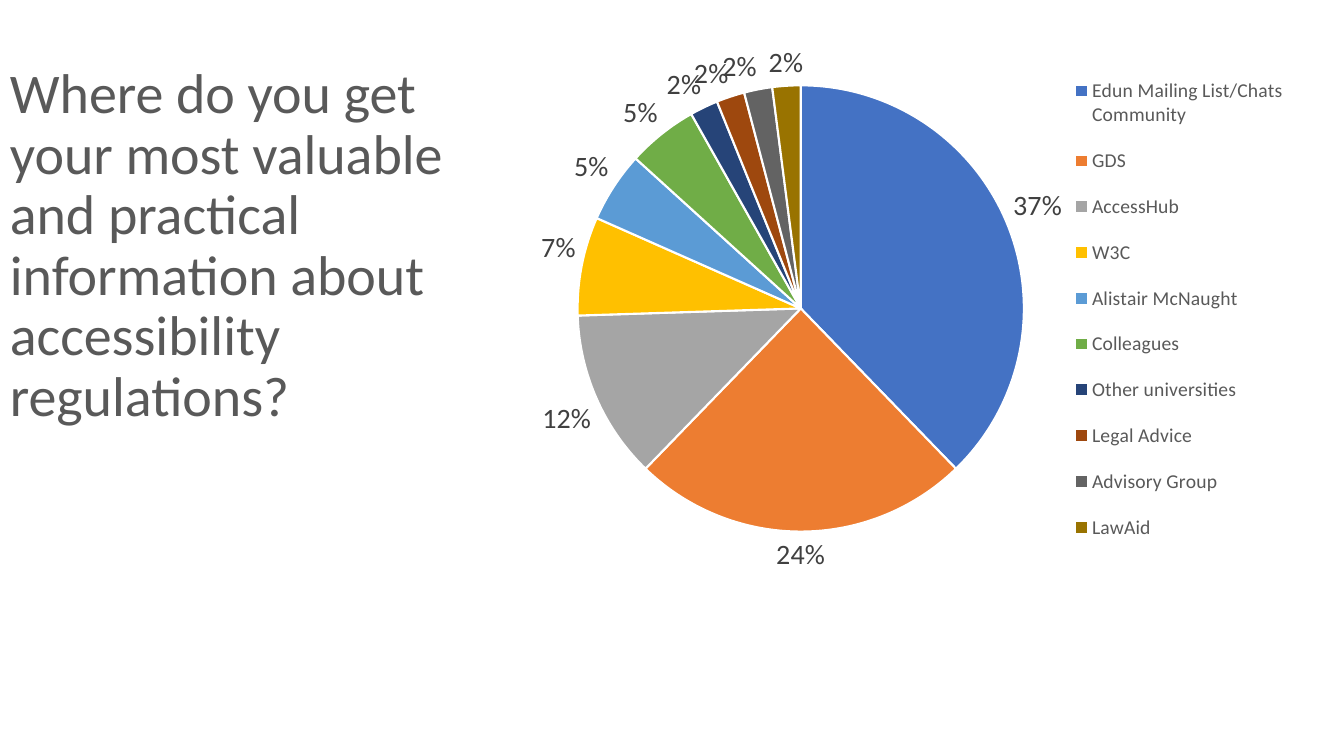
"""Build a slide asking where accessibility information comes from, with a pie chart."""
from dataclasses import dataclass

from lxml import etree
from pptx import Presentation
from pptx import util as u
from pptx.chart.chart import Chart
from pptx.chart.data import CategoryChartData
from pptx.dml.color import RGBColor
from pptx.enum import chart as charts
from pptx.enum import text
from pptx.oxml.ns import qn
from pptx.slide import Slide

PX_PER_INCH = 100.8
FONT = "Calibri"
WHITE = RGBColor(0xFF, 0xFF, 0xFF)
GREY = RGBColor(0x59, 0x59, 0x59)
DARK_GREY = RGBColor(0x40, 0x40, 0x40)
BLACK = RGBColor(0x00, 0x00, 0x00)
BLUE = RGBColor(0x44, 0x72, 0xC4)
ORANGE = RGBColor(0xED, 0x7D, 0x31)
SILVER = RGBColor(0xA5, 0xA5, 0xA5)
GOLD = RGBColor(0xFF, 0xC0, 0x00)
SKY = RGBColor(0x5B, 0x9B, 0xD5)
GREEN = RGBColor(0x70, 0xAD, 0x47)
NAVY = RGBColor(0x26, 0x44, 0x78)
RUST = RGBColor(0x9E, 0x48, 0x0E)
CHARCOAL = RGBColor(0x63, 0x63, 0x63)
OLIVE = RGBColor(0x99, 0x73, 0x00)

QUESTION = ("Where do you get your most valuable and practical "
            "information about accessibility regulations?")


@dataclass(frozen=True)
class Box:
    """A rectangle in px."""
    left: int
    top: int
    width: int
    height: int


@dataclass(frozen=True)
class Source:
    """One information source and its share in percent."""
    name: str
    share: int
    color: RGBColor


QUESTION_BOX = Box(0, 0, 466, 494)
CHART_BOX = Box(491, 30, 825, 556)
PIE_BOX = Box(578, 85, 446, 447)
LEGEND_BOX = Box(1064, 57, 230, 504)

SOURCES = [
    Source("Edun Mailing List/Chats Community", 37, BLUE),
    Source("GDS", 24, ORANGE),
    Source("AccessHub", 12, SILVER),
    Source("W3C", 7, GOLD),
    Source("Alistair McNaught", 5, SKY),
    Source("Colleagues", 5, GREEN),
    Source("Other universities", 2, NAVY),
    Source("Legal Advice", 2, RUST),
    Source("Advisory Group", 2, CHARCOAL),
    Source("LawAid", 2, OLIVE),
]


def px(length: int) -> u.Emu:
    """Turn px into EMU."""
    return u.Emu(round(length * 914400 / PX_PER_INCH))


def bounds(box: Box) -> tuple[u.Emu, u.Emu, u.Emu, u.Emu]:
    """Give the left, top, width and height of a box in EMU."""
    return px(box.left), px(box.top), px(box.width), px(box.height)


def style_font(font, size: int, color: RGBColor) -> None:
    """Set the typeface, size and colour of a font."""
    font.name = FONT
    font.size = u.Pt(size)
    font.color.rgb = color


def place_in_chart(parent, index: int, box: Box, inner: bool) -> None:
    """Fix a chart part at a box, as fractions of the chart area."""
    for old in parent.findall(qn("c:layout")):
        parent.remove(old)
    layout = etree.Element(qn("c:layout"))
    manual = etree.SubElement(layout, qn("c:manualLayout"))
    settings = {"layoutTarget": "inner"} if inner else {}
    settings |= {
        "xMode": "edge",
        "yMode": "edge",
        "x": f"{(box.left - CHART_BOX.left) / CHART_BOX.width:.3f}",
        "y": f"{(box.top - CHART_BOX.top) / CHART_BOX.height:.3f}",
        "w": f"{box.width / CHART_BOX.width:.3f}",
        "h": f"{box.height / CHART_BOX.height:.3f}",
    }
    for tag, value in settings.items():
        etree.SubElement(manual, qn(f"c:{tag}")).set("val", value)
    parent.insert(index, layout)


def add_question(slide: Slide) -> None:
    """Add the question on the left."""
    frame = slide.shapes.add_textbox(*bounds(QUESTION_BOX)).text_frame
    frame.word_wrap = True
    frame.vertical_anchor = text.MSO_ANCHOR.MIDDLE
    question = frame.paragraphs[0]
    question.text = QUESTION
    question.line_spacing = 0.9
    style_font(question.font, 40, GREY)


def add_legend(chart: Chart) -> None:
    """Add the list of sources to the right of the pie."""
    chart.has_legend = True
    legend = chart.legend
    legend.position = charts.XL_LEGEND_POSITION.RIGHT
    legend.include_in_layout = False
    style_font(legend.font, 14, GREY)
    place_in_chart(legend._element, 1, LEGEND_BOX, inner=False)


def add_pie(slide: Slide) -> None:
    """Add the pie of information sources."""
    answers = CategoryChartData(number_format="0")
    answers.categories = [source.name for source in SOURCES]
    answers.add_series("Series 1", [source.share for source in SOURCES])
    chart = slide.shapes.add_chart(
        charts.XL_CHART_TYPE.PIE, *bounds(CHART_BOX), answers).chart
    chart.has_title = False
    style_font(chart.font, 20, BLACK)
    add_legend(chart)
    place_in_chart(chart._chartSpace.chart.plotArea, 0, PIE_BOX, inner=True)

    pie = chart.plots[0]
    pie.vary_by_categories = True
    for index, source in enumerate(SOURCES):
        piece = pie.series[0].points[index].format
        piece.fill.solid()
        piece.fill.fore_color.rgb = source.color
        piece.line.color.rgb = WHITE
        piece.line.width = u.Pt(1.5)

    labels = pie.series[0].data_labels
    labels.show_value = True
    labels.number_format = '0"%"'
    labels.number_format_is_linked = False
    labels.position = charts.XL_LABEL_POSITION.OUTSIDE_END
    style_font(labels.font, 20, DARK_GREY)


def main() -> None:
    """Build and save the slide."""
    deck = Presentation()
    deck.slide_width, deck.slide_height = px(1344), px(756)
    slide = deck.slides.add_slide(deck.slide_layouts[6])
    add_question(slide)
    add_pie(slide)
    deck.save("out.pptx")


if __name__ == "__main__":
    main()
